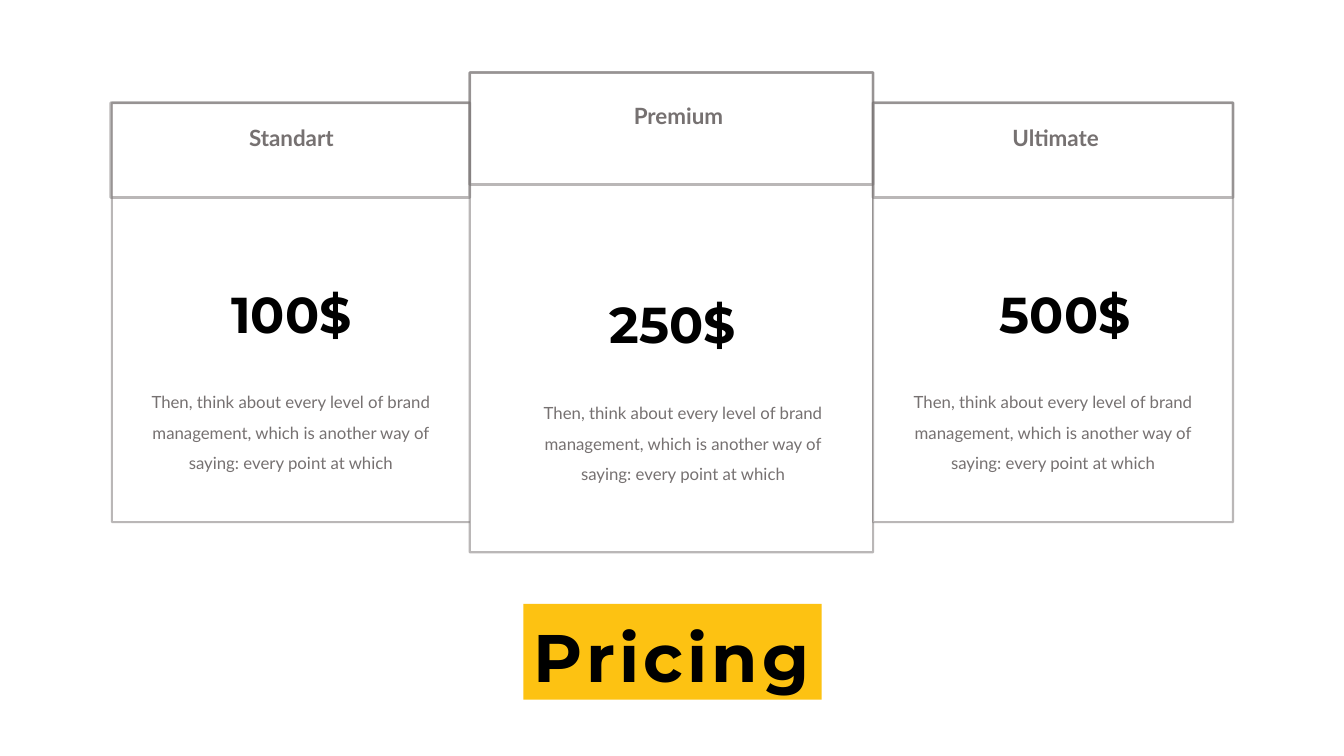
import lxml.etree
import pptx
import pptx.dml.color
import pptx.enum.shapes
import pptx.enum.text
import pptx.oxml.ns
import pptx.util
from pptx.util import Inches

GREY = "767171"
BLACK = "000000"
WHITE = "FFFFFF"
YELLOW = "FDC212"
DESCRIPTION = ("Then, think about every level of brand management, "
               "which is another way of saying: every point at which")

PLANS = [
    {"name": "Standart", "price": "100$", "card": (1.11, 1.02, 3.57, 4.16),
     "header": (1.1, 3.56, 0.94), "name_at": (2.1, 1.13, 1.58),
     "price_at": (2.1, 2.71, 1.58), "description_at": (1.39, 3.69)},
    {"name": "Premium", "price": "250$", "card": (4.66, 0.72, 4, 4.76),
     "header": (4.66, 4, 1.11), "name_at": (5.76, 0.91, 1.94),
     "price_at": (5.88, 2.81, 1.58), "description_at": (5.28, 3.8)},
    {"name": "Ultimate", "price": "500$", "card": (8.66, 1.02, 3.57, 4.16),
     "header": (8.66, 3.57, 0.94), "name_at": (9.66, 1.13, 1.62),
     "price_at": (9.66, 2.71, 1.81), "description_at": (8.95, 3.69)},
]


def paint(color_format, color):
    color_format.rgb = pptx.dml.color.RGBColor.from_string(color)


def add_box(slide, left, top, width, height, fill=None, line_width=None):
    box = slide.shapes.add_shape(
        pptx.enum.shapes.MSO_SHAPE.RECTANGLE,
        Inches(left), Inches(top), Inches(width), Inches(height))
    box.shadow.inherit = False
    if fill:
        box.fill.solid()
        paint(box.fill.fore_color, fill)
    else:
        box.fill.background()
    if line_width:
        box.line.width = pptx.util.Pt(line_width)
        paint(box.line.color, GREY)
        line_color = box.line._ln.find(".//" + pptx.oxml.ns.qn("a:srgbClr"))
        lxml.etree.SubElement(
            line_color, pptx.oxml.ns.qn("a:alpha"), val="50000")
    else:
        box.line.fill.background()


def write_text(frame, text, size, font="Lato", color=GREY, bold=False,
               line_spacing=1.0, letter_spacing=0, inset=0.1):
    frame.word_wrap = True
    frame.auto_size = pptx.enum.text.MSO_AUTO_SIZE.NONE
    frame.vertical_anchor = pptx.enum.text.MSO_ANCHOR.TOP
    frame.margin_left = frame.margin_right = Inches(0.1)
    frame.margin_top = frame.margin_bottom = Inches(inset)
    paragraph = frame.paragraphs[0]
    paragraph.alignment = pptx.enum.text.PP_ALIGN.CENTER
    paragraph.line_spacing = line_spacing
    run = paragraph.add_run()
    run.text = text
    run.font.size = pptx.util.Pt(size)
    run.font.name = font
    run.font.bold = bold
    paint(run.font.color, color)
    if letter_spacing:
        run.font._element.set("spc", str(letter_spacing * 100))


def add_label(slide, left, top, width, height, text, size, **text_format):
    label = slide.shapes.add_textbox(
        Inches(left), Inches(top), Inches(width), Inches(height))
    write_text(label.text_frame, text, size, **text_format)


def add_plan_content(slide, plan):
    add_label(slide, *plan["price_at"], 0.72, plan["price"], 36,
              font="Montserrat", color=BLACK, bold=True)
    add_label(slide, *plan["description_at"], 2.99, 1, DESCRIPTION, 12,
              line_spacing=1.5)
    add_label(slide, *plan["name_at"], 0.72, plan["name"], 16, bold=True)
    left, width, height = plan["header"]
    add_box(slide, left, plan["card"][1], width, height, line_width=2)


def add_title(slide):
    add_box(slide, 5.19, 5.99, 2.96, 0.95, fill=YELLOW)
    title = slide.shapes.title
    title.left, title.top = Inches(4.59), Inches(6.05)
    title.width, title.height = Inches(4.15), Inches(0.91)
    write_text(title.text_frame, "Pricing", 48, font="Montserrat",
               color=BLACK, bold=True, letter_spacing=3, inset=0.05)
    slide.shapes._spTree.append(title._element)


def main():
    presentation = pptx.Presentation()
    presentation.slide_width = Inches(13.33)
    presentation.slide_height = Inches(7.5)
    slide = presentation.slides.add_slide(presentation.slide_layouts[5])
    for plan in PLANS:
        add_box(slide, *plan["card"], fill=WHITE, line_width=1.5)
    for plan in PLANS:
        add_plan_content(slide, plan)
    add_title(slide)
    presentation.save("out.pptx")


if __name__ == "__main__":
    main()
